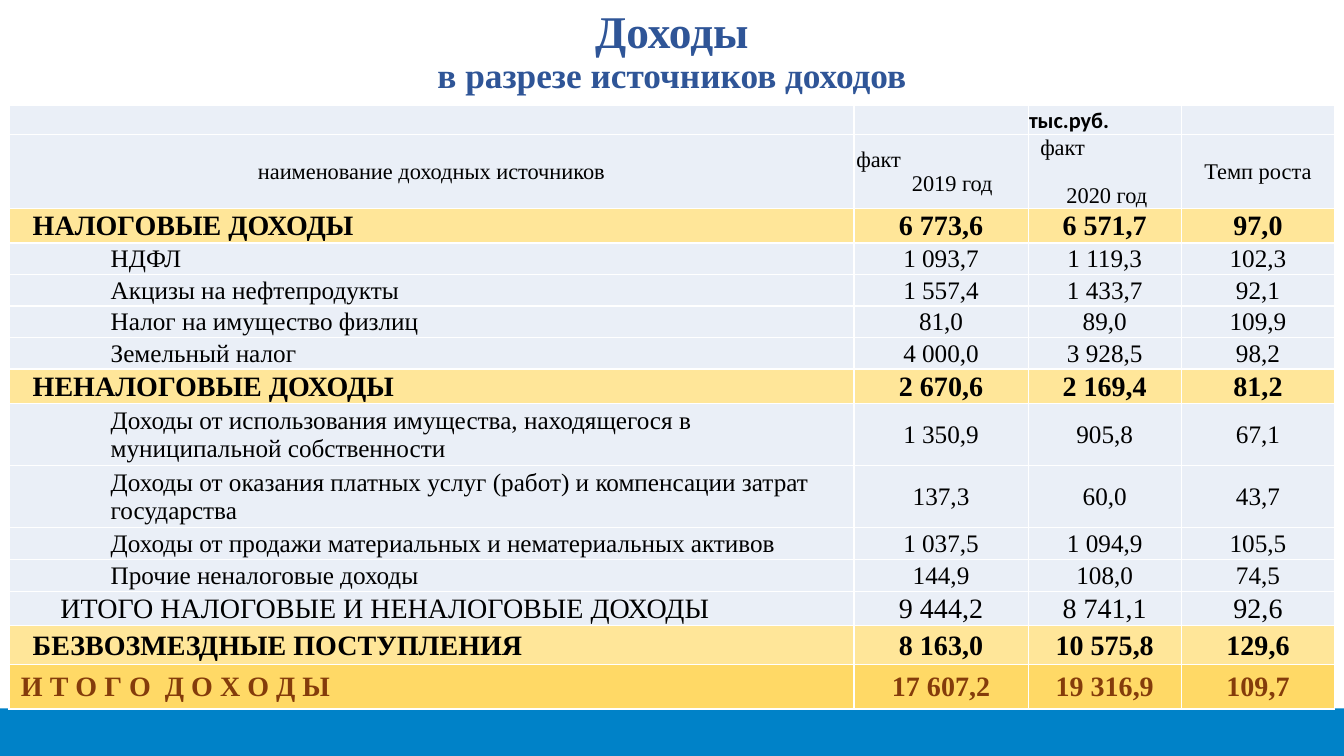
from dataclasses import dataclass

from pptx import Presentation
from pptx.dml.color import RGBColor
from pptx.enum.shapes import MSO_SHAPE
from pptx.enum.text import MSO_ANCHOR, PP_ALIGN
from pptx.util import Pt

LEFT, CENTER = PP_ALIGN.LEFT, PP_ALIGN.CENTER
MIDDLE, BOTTOM = MSO_ANCHOR.MIDDLE, MSO_ANCHOR.BOTTOM
RECTANGLE = MSO_SHAPE.RECTANGLE

TITLE_LINES = [("Доходы", 32.4), ("в разрезе источников доходов", 25.2)]
UNIT = "тыс.руб."
NAME_HEADING = "наименование доходных источников"
GROWTH_HEADING = "Темп роста"
YEAR_HEADINGS = [
    {"column": 1, "year": "2019 год", "indents": (1, 16), "gap": 0},
    {"column": 2, "year": "2020 год", "indents": (8, 3), "gap": 16},
]
INCOME_ROWS = [
    ("section", 24.6, "НАЛОГОВЫЕ ДОХОДЫ", "6 773,6", "6 571,7", "97,0"),
    ("detail", 22.5, "НДФЛ", "1 093,7", "1 119,3", "102,3"),
    ("detail", 22.5, "Акцизы на нефтепродукты", "1 557,4", "1 433,7", "92,1"),
    ("detail", 22.5, "Налог на имущество физлиц", "81,0", "89,0", "109,9"),
    ("detail", 22.5, "Земельный налог", "4 000,0", "3 928,5", "98,2"),
    ("section", 24.6, "НЕНАЛОГОВЫЕ ДОХОДЫ", "2 670,6", "2 169,4", "81,2"),
    ("detail", 44.4, "Доходы от использования имущества, находящегося в муниципальной собственности",
     "1 350,9", "905,8", "67,1"),
    ("detail", 44.4, "Доходы от оказания платных услуг (работ) и компенсации затрат государства",
     "137,3", "60,0", "43,7"),
    ("detail", 23, "Доходы от продажи материальных и нематериальных активов",
     "1 037,5", "1 094,9", "105,5"),
    ("detail", 22.5, "Прочие неналоговые доходы", "144,9", "108,0", "74,5"),
    ("subtotal", 24.6, "ИТОГО НАЛОГОВЫЕ И НЕНАЛОГОВЫЕ ДОХОДЫ", "9 444,2", "8 741,1", "92,6"),
    ("section", 28, "БЕЗВОЗМЕЗДНЫЕ ПОСТУПЛЕНИЯ", "8 163,0", "10 575,8", "129,6"),
    ("total", 31.5, "И Т О Г О  Д О Х О Д Ы", "17 607,2", "19 316,9", "109,7"),
]
HEADER_HEIGHTS = [20.2, 53.2]
COLUMN_WIDTHS = [603.6, 124.4, 109.5, 109.5]


@dataclass(frozen=True)
class RowStyle:
    fill: str
    size: float
    indent: float = 0.7
    bold: bool = False
    color: str = "000000"
    font: str = "Times New Roman"


@dataclass(frozen=True)
class Theme:
    title: str = "2F5597"
    title_font: str = "Times New Roman"
    band: str = "0082C8"
    header: RowStyle = RowStyle("EAEFF7", 16)
    unit: RowStyle = RowStyle("EAEFF7", 16, bold=True, font="Calibri")
    section: RowStyle = RowStyle("FFE699", 20, 17, True)
    detail: RowStyle = RowStyle("EAEFF7", 18, 72.7)
    subtotal: RowStyle = RowStyle("EAEFF7", 20, 36.7)
    total: RowStyle = RowStyle("FFD966", 20, 8.6, True, "843C0B")


THEME = Theme()


def format_font(font, name, size, color, bold):
    font.name, font.size, font.bold = name, Pt(size), bold
    font.color.rgb = RGBColor.from_string(color)


def write_paragraph(paragraph, text, style, alignment):
    paragraph.text = text
    paragraph.alignment = alignment
    format_font(paragraph.font, style.font, style.size, style.color, style.bold)


def write_cell(cell, text, style, alignment=CENTER, indent=0.7, anchor=MIDDLE):
    cell.fill.solid()
    cell.fill.fore_color.rgb = RGBColor.from_string(style.fill)
    cell.margin_left, cell.margin_right = Pt(indent), Pt(0.7)
    cell.margin_top, cell.margin_bottom = Pt(0.7), Pt(0)
    cell.vertical_anchor = anchor
    write_paragraph(cell.text_frame.paragraphs[0], text, style, alignment)


def add_band(slide):
    band = slide.shapes.add_shape(RECTANGLE, Pt(0), Pt(506), Pt(960), Pt(34))
    band.shadow.inherit = False
    band.fill.solid()
    band.fill.fore_color.rgb = RGBColor.from_string(THEME.band)
    band.line.fill.background()


def add_title(slide):
    title = slide.shapes.title
    title.left, title.top, title.width, title.height = Pt(66), Pt(0), Pt(828), Pt(75.6)
    title.text_frame.vertical_anchor = MIDDLE
    paragraph = title.text_frame.paragraphs[0]
    paragraph.alignment, paragraph.line_spacing = CENTER, 0.9
    for index, (text, size) in enumerate(TITLE_LINES):
        if index:
            paragraph.add_line_break()
        run = paragraph.add_run()
        run.text = text
        format_font(run.font, THEME.title_font, size, THEME.title, True)


def fill_headers(table):
    for column in range(len(COLUMN_WIDTHS)):
        write_cell(table.cell(0, column), "", THEME.unit)
    write_cell(table.cell(0, 2), UNIT, THEME.unit, LEFT, anchor=BOTTOM)
    write_cell(table.cell(1, 0), NAME_HEADING, THEME.header)
    write_cell(table.cell(1, 3), GROWTH_HEADING, THEME.header)
    for heading in YEAR_HEADINGS:
        cell = table.cell(1, heading["column"])
        write_cell(cell, "факт", THEME.header, LEFT)
        year = cell.text_frame.add_paragraph()
        write_paragraph(year, heading["year"], THEME.header, CENTER)
        year.space_before = Pt(heading["gap"])
        for paragraph, indent in zip(cell.text_frame.paragraphs, heading["indents"]):
            paragraph._p.get_or_add_pPr().set("marL", str(Pt(indent)))


def add_income_table(slide):
    heights = HEADER_HEIGHTS + [row[1] for row in INCOME_ROWS]
    frame = slide.shapes.add_table(len(heights), len(COLUMN_WIDTHS), Pt(6.4), Pt(75.6),
                                   Pt(sum(COLUMN_WIDTHS)), Pt(sum(heights)))
    table = frame.table
    table.first_row = table.horz_banding = False
    for column, width in zip(table.columns, COLUMN_WIDTHS):
        column.width = Pt(width)
    for row, height in zip(table.rows, heights):
        row.height = Pt(height)
    fill_headers(table)
    for row, (kind, _, name, *values) in enumerate(INCOME_ROWS, len(HEADER_HEIGHTS)):
        style = getattr(THEME, kind)
        write_cell(table.cell(row, 0), name, style, LEFT, style.indent)
        for column, value in enumerate(values, 1):
            write_cell(table.cell(row, column), value, style)


def main():
    presentation = Presentation()
    presentation.slide_width, presentation.slide_height = Pt(960), Pt(540)
    slide = presentation.slides.add_slide(presentation.slide_layouts[5])
    add_band(slide)
    add_title(slide)
    add_income_table(slide)
    presentation.save("out.pptx")


if __name__ == "__main__":
    main()
